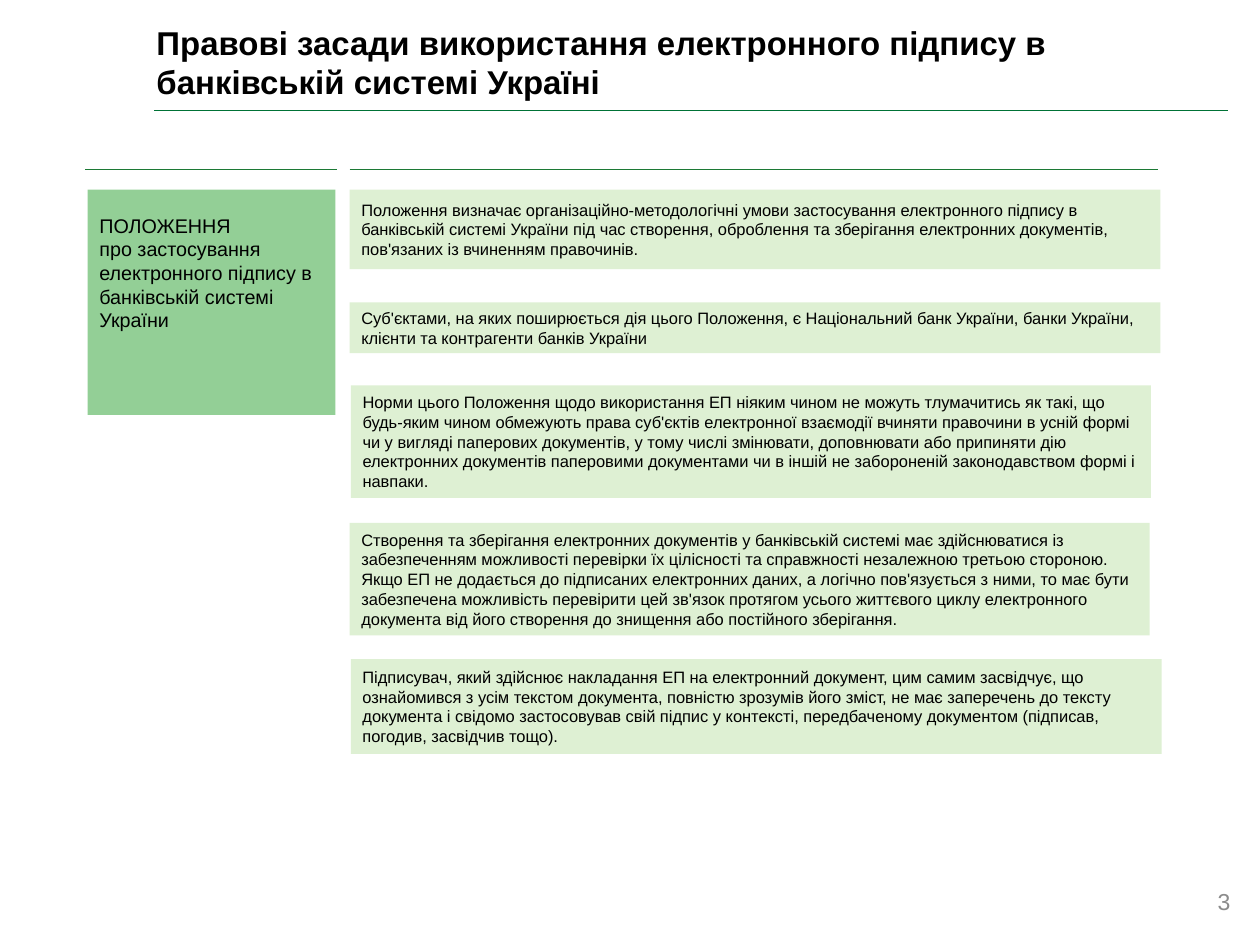
from lxml import etree
from pptx import Presentation
from pptx.dml.color import RGBColor
from pptx.enum.shapes import MSO_CONNECTOR, MSO_SHAPE
from pptx.enum.text import MSO_ANCHOR, PP_ALIGN
from pptx.oxml.ns import qn
from pptx.util import Inches, Pt

STRAIGHT = MSO_CONNECTOR.STRAIGHT
RECTANGLE = MSO_SHAPE.RECTANGLE
TOP, MIDDLE, BOTTOM = MSO_ANCHOR.TOP, MSO_ANCHOR.MIDDLE, MSO_ANCHOR.BOTTOM
LEFT, RIGHT = PP_ALIGN.LEFT, PP_ALIGN.RIGHT

TITLE_GREEN, RULE_GREEN = "007236", "1C7935"
SUBJECT_FILL, PROVISION_FILL = "93CF96", "DEF0D3"
BLACK, GREY = "000000", "8C8C8C"

TITLE = "Правові засади використання електронного підпису в банківській системі Україні"
SUBJECT = [
    "ПОЛОЖЕННЯ",
    "про застосування електронного підпису в банківській системі України",
]
PAGE_NUMBER = "3"

PROVISIONS = [
    ((2.95, 1.6, 6.84, 0.67),
     "Положення визначає організаційно-методологічні умови застосування електронного підпису в "
     "банківській системі України під час створення, оброблення та зберігання електронних "
     "документів, пов'язаних із вчиненням правочинів."),
    ((2.95, 2.55, 6.84, 0.43),
     "Суб'єктами, на яких поширюється дія цього Положення, є Національний банк України, "
     "банки України, клієнти та контрагенти банків України"),
    ((2.96, 3.25, 6.75, 0.95),
     "Норми цього Положення щодо використання ЕП ніяким чином не можуть тлумачитись як такі, "
     "що будь-яким чином обмежують права суб'єктів електронної взаємодії вчиняти правочини в "
     "усній формі чи у вигляді паперових документів, у тому числі змінювати, доповнювати або "
     "припиняти дію електронних документів паперовими документами чи в іншій не забороненій "
     "законодавством формі і навпаки."),
    ((2.95, 4.41, 6.75, 0.95),
     "Створення та зберігання електронних документів у банківській системі має здійснюватися "
     "із забезпеченням можливості перевірки їх цілісності та справжності незалежною третьою "
     "стороною. Якщо ЕП не додається до підписаних електронних даних, а логічно пов'язується з "
     "ними, то має бути забезпечена можливість перевірити цей зв'язок протягом усього життєвого "
     "циклу електронного документа від його створення до знищення або постійного зберігання."),
    ((2.96, 5.56, 6.84, 0.8),
     "Підписувач, який здійснює накладання ЕП на електронний документ, цим самим засвідчує, "
     "що ознайомився з усім текстом документа, повністю зрозумів його зміст, не має заперечень "
     "до тексту документа і свідомо застосовував свій підпис у контексті, передбаченому "
     "документом (підписав, погодив, засвідчив тощо)."),
]

RULES = [
    (1.3, 10.36, 0.93, TITLE_GREEN, 0.75),
    (0.72, 2.84, 1.43, RULE_GREEN, 1),
    (2.95, 9.77, 1.43, RULE_GREEN, 1),
]


def color(value):
    return RGBColor.from_string(value)


def write(shape, lines, size, ink=BLACK, bold=False, align=LEFT,
          anchor=TOP, insets=(0.1, 0.05, 0.1, 0.05)):
    frame = shape.text_frame
    frame.word_wrap = True
    frame.vertical_anchor = anchor
    (frame.margin_left, frame.margin_top,
     frame.margin_right, frame.margin_bottom) = map(Inches, insets)
    for index, line in enumerate(lines):
        para = frame.add_paragraph() if index else frame.paragraphs[0]
        para.alignment = align
        span = para.add_run()
        span.text = line
        span.font.name = "Arial"
        span.font.size = Pt(size)
        span.font.bold = bold
        span.font.color.rgb = color(ink)


def add_text(page, place, lines, size, **style):
    box = page.shapes.add_textbox(*map(Inches, place))
    write(box, lines, size, **style)


def add_panel(page, place, fill, lines, size, **style):
    panel = page.shapes.add_shape(RECTANGLE, *map(Inches, place))
    panel.shadow.inherit = False
    panel.fill.solid()
    panel.fill.fore_color.rgb = color(fill)
    panel.line.fill.background()
    write(panel, lines, size, **style)


def add_rule(page, start, end, y, ink, width):
    rule = page.shapes.add_connector(STRAIGHT, *map(Inches, (start, y, end, y)))
    rule.line.color.rgb = color(ink)
    rule.line.width = Pt(width)
    etree.SubElement(rule._element.spPr, qn("a:effectLst"))


def main():
    deck = Presentation()
    deck.slide_width, deck.slide_height = Inches(10.63), Inches(7.87)
    page = deck.slides.add_slide(deck.slide_layouts[6])

    add_text(page, (1.32, 0, 8.92, 1.04), [TITLE], 20, bold=True, anchor=MIDDLE,
             insets=(0, 0, 0, 0))
    add_text(page, (9.57, 7.25, 0.92, 0.52), [PAGE_NUMBER], 14, ink=GREY,
             align=RIGHT, anchor=BOTTOM, insets=(0.11, 0.05, 0.11, 0.05))
    for rule in RULES:
        add_rule(page, *rule)
    add_panel(page, (0.74, 1.6, 2.09, 1.9), SUBJECT_FILL, SUBJECT, 12,
              insets=(0.1, 0.2, 0.1, 0.05))
    for place, provision in PROVISIONS:
        add_panel(page, place, PROVISION_FILL, [provision], 10, anchor=MIDDLE)

    deck.save("out.pptx")


if __name__ == "__main__":
    main()
